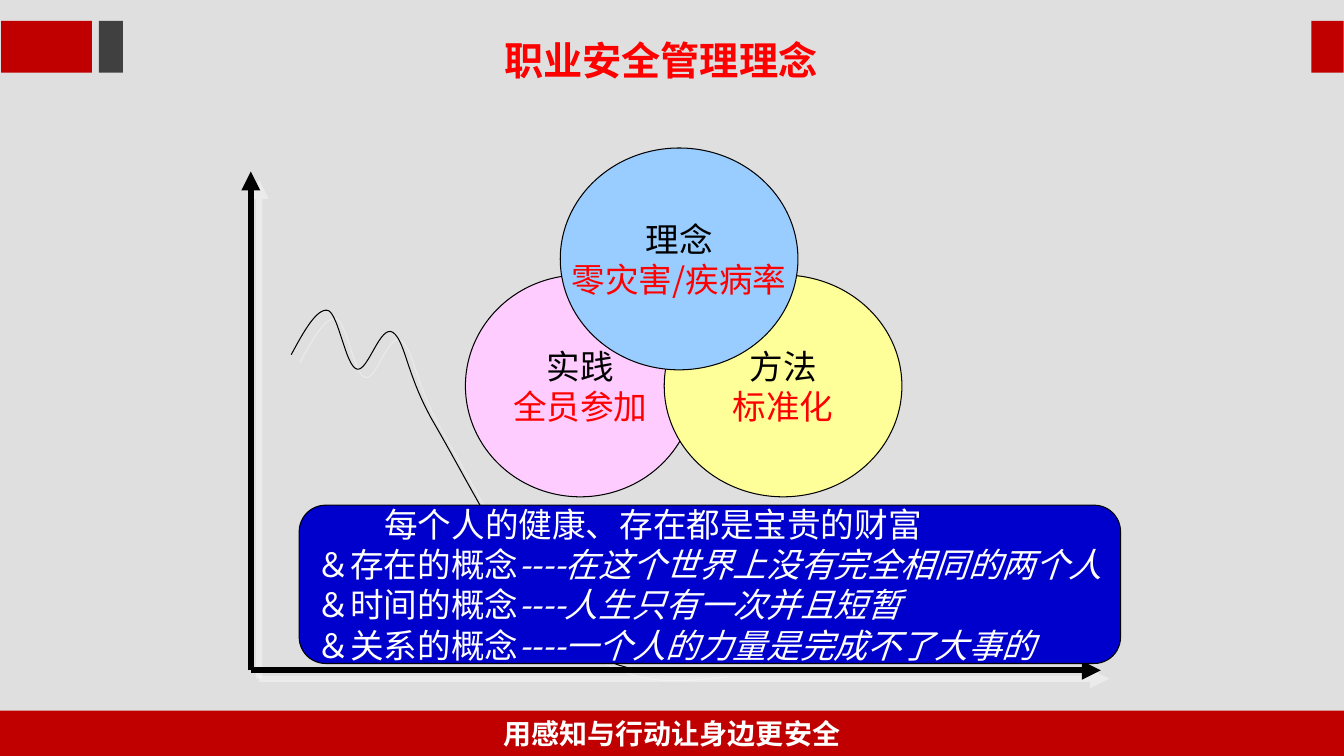
from lxml.etree import SubElement
from pptx import Presentation
from pptx.dml.color import RGBColor
from pptx.enum.shapes import MSO_CONNECTOR, MSO_SHAPE
from pptx.enum.text import MSO_ANCHOR, PP_ALIGN
from pptx.oxml.ns import qn
from pptx.util import Cm, Pt

FONT = "Noto Sans CJK SC"
COLORS = {
    "ground": "DFDFDF", "band": "C00000", "grey": "404040", "red": "FF0000",
    "black": "000000", "white": "FFFFFF", "pink": "FFCCFF", "yellow": "FFFF99",
    "sky": "99CCFF", "navy": "0000CC", "shade": "F8F8F8",
}
BLOCKS = [
    ((0, 17.91, 33.87, 1.14), "band"),
    ((33.05, 0.53, 0.81, 1.3), "band"),
    ((0.03, 0.53, 2.29, 1.3), "band"),
    ((2.49, 0.53, 0.61, 1.3), "grey"),
]
CIRCLES = [
    ((11.73, 6.93, 5.79, 5.59), "pink", "实践", "全员参加"),
    ((16.74, 6.93, 5.99, 5.59), "yellow", "方法", "标准化"),
    ((14.12, 3.73, 5.99, 5.59), "sky", "理念", "零灾害/疾病率"),
]
CONCEPTS = [
    ("＆存在的概念", "----在这个世界上没有完全相同的两个人"),
    ("＆时间的概念", "----人生只有一次并且短暂"),
    ("＆关系的概念", "----一个人的力量是完成不了大事的"),
]
AXIS_CORNER = (6.32, 16.89)
AXIS_ENDS = [(6.32, 4.32), (27.74, 16.89)]
CURVE_START = (7.34, 8.94)
CURVE_BENDS = [
    ((7.65, 8.36), (7.98, 7.77), (8.26, 7.82)),
    ((8.53, 7.9), (8.71, 9.22), (8.99, 9.3)),
    ((9.27, 9.4), (9.58, 8.15), (9.91, 8.38)),
    ((10.24, 8.64), (10.24, 9.5), (11, 10.77)),
    ((11.76, 12.07), (13.28, 15.11), (14.48, 16.13)),
    ((15.67, 17.12), (16.89, 16.99), (18.14, 16.84)),
]
CURVE_STEPS = 16


def color(name):
    """Return the named colour."""
    return RGBColor.from_string(COLORS[name])


def apply(target, values):
    """Set each named attribute on the target."""
    for name, value in values.items():
        setattr(target, name, value)


def place(box, area):
    """Move and size a box, in centimetres."""
    names = ("left", "top", "width", "height")
    apply(box, dict(zip(names, map(Cm, area))))


def outline(item, width=0.75):
    """Give an item a black line."""
    item.line.color.rgb = color("black")
    item.line.width = Pt(width)


def add_shadow(item):
    """Cast a pale shadow to the lower right."""
    effects = SubElement(item._element.spPr, qn("a:effectLst"))
    shadow = SubElement(effects, qn("a:outerShdw"), dist=str(Pt(8.5)),
                        dir="2700000", algn="ctr", rotWithShape="0")
    tint = SubElement(shadow, qn("a:srgbClr"), val=COLORS["shade"])
    SubElement(tint, qn("a:alpha"), val="50000")


def add_block(page, kind, area, fill):
    """Add a plain filled shape without line or shadow."""
    box = page.shapes.add_shape(kind, *map(Cm, area))
    box.fill.solid()
    box.fill.fore_color.rgb = color(fill)
    box.line.fill.background()
    box.shadow.inherit = False
    return box


def write(box, lines, align=PP_ALIGN.CENTER, leading=None):
    """Write lines of (text, colour, format) spans into a box."""
    frame = box.text_frame
    apply(frame, {"word_wrap": False, "vertical_anchor": MSO_ANCHOR.MIDDLE})
    for index, spans in enumerate(lines):
        para = frame.add_paragraph() if index else frame.paragraphs[0]
        apply(para, {"alignment": align, "line_spacing": leading})
        for text, ink, values in spans:
            span = para.add_run()
            span.text = text
            apply(span.font, {"name": FONT, **values})
            span.font.color.rgb = color(ink)
            SubElement(span._r.get_or_add_rPr(), qn("a:ea"), typeface=FONT)


def add_axis(page, end):
    """Add an arrow from the chart corner to an end point."""
    axis = page.shapes.add_connector(
        MSO_CONNECTOR.STRAIGHT, *map(Cm, AXIS_CORNER + end))
    outline(axis, 4.5)
    SubElement(axis.line._get_or_add_ln(), qn("a:tailEnd"), type="triangle")
    add_shadow(axis)


def curve_points():
    """List the points along the accident curve."""
    start, points = CURVE_START, []
    for first, second, end in CURVE_BENDS:
        for step in range(1, CURVE_STEPS + 1):
            t = step / CURVE_STEPS
            u = 1 - t
            points.append(tuple(
                Cm(u**3 * a + 3 * u * u * t * b + 3 * u * t * t * c + t**3 * d)
                for a, b, c, d in zip(start, first, second, end)))
        start = end
    return points


def add_curve(page):
    """Add the falling accident curve."""
    builder = page.shapes.build_freeform(*map(Cm, CURVE_START))
    builder.add_line_segments(curve_points(), close=False)
    curve = builder.convert_to_shape()
    curve.fill.background()
    outline(curve)
    add_shadow(curve)


def add_concepts(page, large):
    """Add the blue panel of concepts."""
    panel = add_block(page, MSO_SHAPE.FLOWCHART_ALTERNATE_PROCESS,
                      (7.54, 12.73, 20.7, 3.99), "navy")
    outline(panel)
    lines = [[("每个人的健康、存在都是宝贵的财富", "white", large)]]
    for concept, meaning in CONCEPTS:
        lines.append([(concept, "white", large),
                      (meaning, "white", {**large, "italic": True})])
    write(panel, lines, PP_ALIGN.LEFT, Pt(28.8))
    heading = panel.text_frame.paragraphs[0]
    heading._p.get_or_add_pPr().set("indent", str(Cm(1.7)))


def main():
    """Build and save the slide."""
    deck = Presentation()
    apply(deck, {"slide_width": Cm(33.87), "slide_height": Cm(19.05)})
    page = deck.slides.add_slide(deck.slide_layouts[5])
    page.background.fill.solid()
    page.background.fill.fore_color.rgb = color("ground")
    for area, fill in BLOCKS:
        add_block(page, MSO_SHAPE.RECTANGLE, area, fill)
    title = page.shapes.title
    place(title, (12.45, 0.79, 8.41, 1.45))
    write(title, [[("职业安全管理理念", "red", {"size": Pt(28), "bold": True})]])
    slogan = page.shapes.add_textbox(*map(Cm, (0, 18.14, 33.87, 0.66)))
    write(slogan, [[("用感知与行动让身边更安全", "white",
                     {"size": Pt(20), "bold": True})]])
    add_curve(page)
    for end in AXIS_ENDS:
        add_axis(page, end)
    large = {"size": Pt(24)}
    for area, fill, topic, goal in CIRCLES:
        circle = add_block(page, MSO_SHAPE.OVAL, area, fill)
        outline(circle)
        write(circle, [[(topic, "black", large)], [(goal, "red", large)]],
              leading=Pt(28.8))
    add_concepts(page, large)
    deck.save("out.pptx")


if __name__ == "__main__":
    main()
